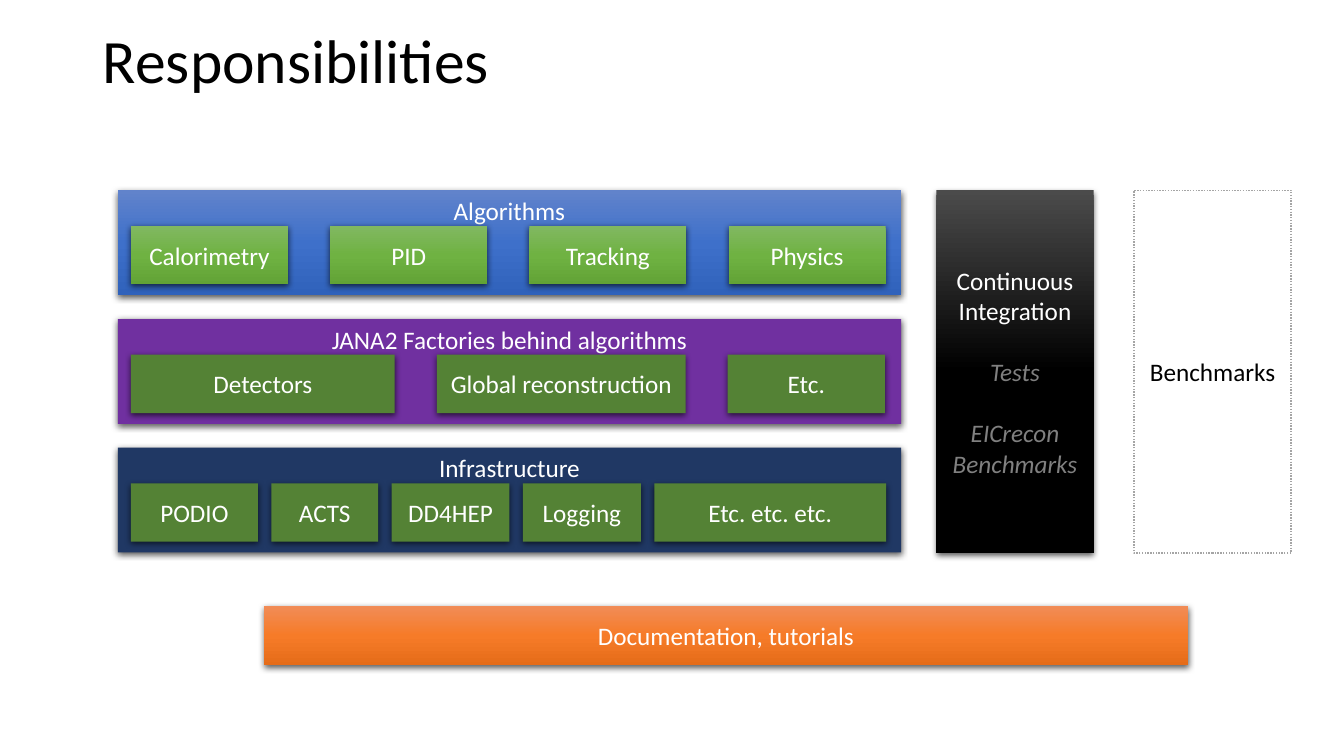
from lxml.etree import SubElement
from pptx import Presentation
from pptx.dml.color import RGBColor
from pptx.enum.dml import MSO_LINE
from pptx.enum.shapes import MSO_SHAPE
from pptx.enum.text import MSO_ANCHOR, MSO_AUTO_SIZE, PP_ALIGN
from pptx.oxml.ns import qn
from pptx.util import Cm, Pt

BLACK = RGBColor(0x00, 0x00, 0x00)
WHITE = RGBColor(0xFF, 0xFF, 0xFF)
GRAY = RGBColor(0x80, 0x80, 0x80)
OUTLINE_GRAY = RGBColor(0xA5, 0xA5, 0xA5)
PURPLE = RGBColor(0x70, 0x30, 0xA0)
NAVY = RGBColor(0x20, 0x38, 0x64)
DARK_GREEN = RGBColor(0x54, 0x82, 0x35)
BLUE_FADE = (RGBColor(0x61, 0x83, 0xCB), RGBColor(0x3E, 0x70, 0xCA), RGBColor(0x30, 0x62, 0xBB))
GREEN_FADE = (RGBColor(0x81, 0xB8, 0x61), RGBColor(0x6F, 0xB2, 0x42), RGBColor(0x62, 0xA3, 0x36))
BLACK_FADE = (RGBColor(0x4B, 0x4B, 0x4B), BLACK, BLACK)
ORANGE_FADE = (RGBColor(0xF1, 0x8C, 0x57), RGBColor(0xF6, 0x7B, 0x28), RGBColor(0xE5, 0x6C, 0x19))

LABEL_FONT = {"name": "Calibri", "size": Pt(18)}
TITLE_FONT = {"name": "Calibri", "size": Pt(44)}

# Lengths in centimetres
LAYERS_LEFT, LAYERS_TOP = 2.97, 4.8
LAYER_WIDTH, LAYER_HEIGHT, LAYER_PITCH = 19.74, 2.64, 3.24
PARTS_LEFT, PARTS_DROP, PART_HEIGHT = 3.3, 0.9, 1.47
PILLAR_WIDTH, PILLAR_HEIGHT = 3.96, 9.14

# Label, fill, fill of the parts, gap between parts, (part, width)
LAYERS = [
    ("Algorithms", BLUE_FADE, GREEN_FADE, 1.06,
     [("Calorimetry", 3.96), ("PID", 3.96), ("Tracking", 3.96), ("Physics", 3.96)]),
    ("JANA2 Factories behind algorithms", PURPLE, DARK_GREEN, 1.06,
     [("Detectors", 6.65), ("Global reconstruction", 6.27), ("Etc.", 3.96)]),
    ("Infrastructure", NAVY, DARK_GREEN, 0.34,
     [("PODIO", 3.2), ("ACTS", 2.69), ("DD4HEP", 2.97), ("Logging", 2.97),
      ("Etc. etc. etc.", 5.84)]),
]


def apply_format(target, values):
    for attribute, value in values.items():
        setattr(target, attribute, value)


def fill_fade(block, colors):
    """Fill the block from top to bottom through evenly spaced colours."""
    block.fill.gradient()
    block.fill.gradient_angle = 270
    stops = block._element.spPr.find(".//" + qn("a:gsLst"))
    stops.clear()
    for index, color in enumerate(colors):
        position = 100000 * index // (len(colors) - 1)
        stop = SubElement(stops, qn("a:gs"), pos=str(position))
        SubElement(stop, qn("a:srgbClr"), val=str(color))


def add_drop_shadow(block):
    effects = block._element.spPr.find(qn("a:effectLst"))
    shadow = SubElement(effects, qn("a:outerShdw"), blurRad=str(Pt(4.5)), dist=str(Pt(1.5)),
                        dir="5400000", algn="ctr", rotWithShape="0")
    color = SubElement(shadow, qn("a:srgbClr"), val=str(BLACK))
    SubElement(color, qn("a:alpha"), val="63000")


def add_label(paragraph, text, color, **extra):
    paragraph.alignment = PP_ALIGN.CENTER
    run = paragraph.add_run()
    run.text = text
    apply_format(run.font, LABEL_FONT | extra)
    run.font.color.rgb = color


def add_block(shapes, box, text, fill, color=WHITE, anchor=MSO_ANCHOR.MIDDLE, shadow=True):
    block = shapes.add_shape(MSO_SHAPE.RECTANGLE, *(Cm(length) for length in box))
    if isinstance(fill, RGBColor):
        block.fill.solid()
        block.fill.fore_color.rgb = fill
    else:
        fill_fade(block, fill)
    block.line.fill.background()
    block.shadow.inherit = False
    if shadow:
        add_drop_shadow(block)
    apply_format(block.text_frame, {"word_wrap": True, "vertical_anchor": anchor})
    add_label(block.text_frame.paragraphs[0], text, color)
    return block


def add_layer(shapes, top, label, fill, part_fill, gap, parts):
    add_block(shapes, (LAYERS_LEFT, top, LAYER_WIDTH, LAYER_HEIGHT), label, fill,
              anchor=MSO_ANCHOR.TOP)
    left = PARTS_LEFT
    for part, width in parts:
        add_block(shapes, (left, top + PARTS_DROP, width, PART_HEIGHT), part, part_fill)
        left += width + gap


def add_pillars(shapes):
    integration = add_block(shapes, (23.6, LAYERS_TOP, PILLAR_WIDTH, PILLAR_HEIGHT),
                            "Continuous Integration", BLACK_FADE)
    for check in ("Tests", "EICrecon Benchmarks"):
        paragraph = integration.text_frame.add_paragraph()
        paragraph.space_before = Pt(22)
        add_label(paragraph, check, GRAY, italic=True)

    benchmarks = add_block(shapes, (28.58, LAYERS_TOP, PILLAR_WIDTH, PILLAR_HEIGHT),
                           "Benchmarks", WHITE, color=BLACK, shadow=False)
    benchmarks.line.color.rgb = OUTLINE_GRAY
    apply_format(benchmarks.line, {"width": Pt(1), "dash_style": MSO_LINE.ROUND_DOT})


def set_title(title, text):
    apply_format(title, {"left": Cm(2.34), "top": Cm(-0.23),
                         "width": Cm(29.21), "height": Cm(3.68)})
    title.text = text
    apply_format(title.text_frame, {"auto_size": MSO_AUTO_SIZE.NONE,
                                    "vertical_anchor": MSO_ANCHOR.MIDDLE})
    heading = title.text_frame.paragraphs[0]
    apply_format(heading, {"alignment": PP_ALIGN.LEFT, "line_spacing": 0.9})
    font = heading.runs[0].font
    apply_format(font, TITLE_FONT)
    font.color.rgb = BLACK


def main():
    deck = Presentation()
    apply_format(deck, {"slide_width": Cm(33.87), "slide_height": Cm(19.05)})
    slide = deck.slides.add_slide(deck.slide_layouts[5])
    set_title(slide.shapes.title, "Responsibilities")

    layers = slide.shapes.add_group_shape()
    for index, layer in enumerate(LAYERS):
        add_layer(layers.shapes, LAYERS_TOP + index * LAYER_PITCH, *layer)
    add_pillars(slide.shapes)
    add_block(slide.shapes, (6.65, 15.27, 23.29, 1.5), "Documentation, tutorials", ORANGE_FADE)
    deck.save("out.pptx")


if __name__ == "__main__":
    main()
